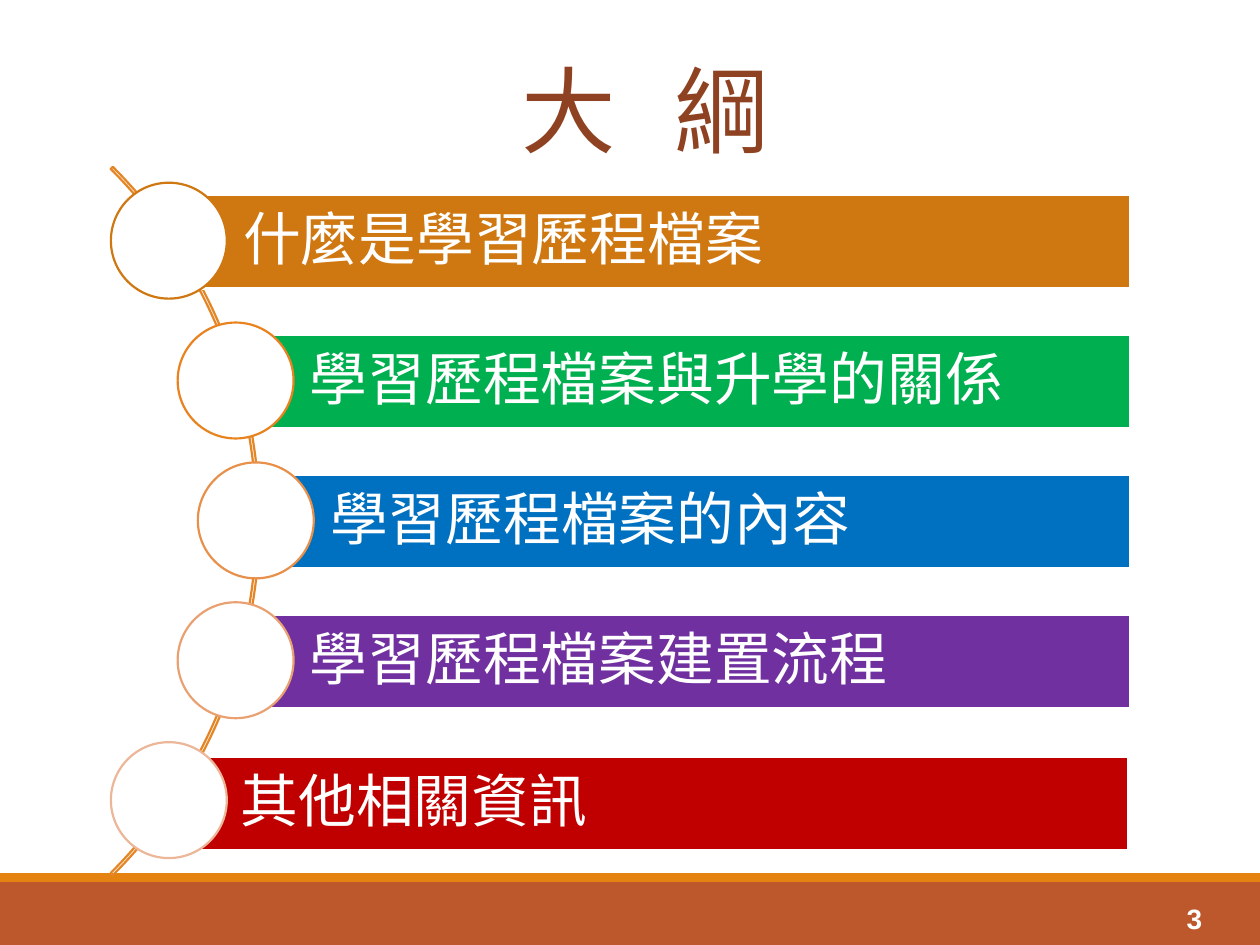
import pptx
import pptx.util
import pptx.dml.color
import pptx.enum.shapes
import pptx.enum.text
import pptx.oxml.ns
from lxml import etree

KIND = pptx.enum.shapes.MSO_SHAPE
ALIGN = pptx.enum.text.PP_ALIGN
ANCHOR = pptx.enum.text.MSO_ANCHOR
COLS, ROWS = 100, 75
CJK = "Noto Sans CJK JP"

ITEMS = [  # text, left of the circle, bar colour, ring colour, nudge of the bar
    ("什麼是學習歷程檔案", 8.8, "CF7710", "CF7710", (0, 0)),
    ("學習歷程檔案與升學的關係", 14.1, "00B050", "E88320", (0, 0)),
    ("學習歷程檔案的內容", 15.7, "0070C0", "E8904A", (0, 0)),
    ("學習歷程檔案建置流程", 14.1, "7030A0", "E9A172", (0, 0)),
    ("其他相關資訊", 8.8, "C00000", "ECB698", (-0.2, 0.2)),
]
TOP, PITCH, RING = 14.5, 11.1, 9.2
BAR, RIGHT = 7.4, 89.7


def color(text):
    return pptx.dml.color.RGBColor.from_string(text)


class Page:
    def __init__(self, deck):
        self.cell_w = deck.slide_width / COLS
        self.cell_h = deck.slide_height / ROWS
        self.slide = deck.slides.add_slide(deck.slide_layouts[5])

    def box(self, left, top, width, height):
        """Turn grid cells into slide lengths."""
        cells = (left * self.cell_w, top * self.cell_h,
                 width * self.cell_w, height * self.cell_h)
        return [round(cell) for cell in cells]

    def shape(self, kind, area, fill=None, line=None):
        item = self.slide.shapes.add_shape(kind, *self.box(*area))
        item.shadow.inherit = False
        if fill:
            item.fill.solid()
            item.fill.fore_color.rgb = color(fill)
        else:
            item.fill.background()
        if line:
            item.line.color.rgb = color(line)
            item.line.width = pptx.util.Pt(1.25)
        else:
            item.line.fill.background()
        return item

    def letter(self, item, texts, size, ink, font=CJK, align=ALIGN.LEFT,
               anchor=ANCHOR.MIDDLE, space=None, bold=False):
        """Fill a shape with one paragraph, a run for each text."""
        frame = item.text_frame
        frame.word_wrap = True
        frame.auto_size = pptx.enum.text.MSO_AUTO_SIZE.NONE
        frame.vertical_anchor = anchor
        para = frame.paragraphs[0]
        para.alignment = align
        para.line_spacing = space
        face = para.font
        face.name, face.size, face.bold = font, pptx.util.Pt(size), bold
        face.color.rgb = color(ink)
        for text in texts:
            run = para.add_run()
            run.text = text
            run.font.name = font
            east = etree.SubElement(run.font._element, pptx.oxml.ns.qn("a:ea"))
            east.set("typeface", font)
        return para

    def title(self, first, last, area):
        """Set two signs apart by one widely tracked space."""
        item = self.slide.shapes.title
        item.left, item.top, item.width, item.height = self.box(*area)
        para = self.letter(item, (first, " ", last), 54, "8E4221",
                           align=ALIGN.CENTER, anchor=ANCHOR.BOTTOM,
                           space=0.85)
        para.runs[1].font._element.set("spc", "2150")

    def label(self, text, area, **style):
        item = self.slide.shapes.add_textbox(*self.box(*area))
        self.letter(item, (text,), **style)

    def arc(self, area, line):
        item = self.shape(KIND.BLOCK_ARC, area, line=line)
        for spot, value in enumerate((189, 27, 0.003)):
            item.adjustments[spot] = value

    def entry(self, row, text, left, fill, ring, nudge):
        """Draw one bar with its circle."""
        top = TOP + row * PITCH
        start = left + RING / 2
        area = (start + nudge[0], top + 1 + nudge[1], RIGHT - start, BAR)
        bar = self.shape(KIND.RECTANGLE, area, fill, "FFFFFF")
        bar.text_frame.margin_left = pptx.util.Inches(0.59)
        self.letter(bar, (text,), 33, "FFFFFF", space=0.9)
        self.shape(KIND.OVAL, (left, top, RING, RING), "FFFFFF", ring)


def main():
    deck = pptx.Presentation()
    deck.slide_width = pptx.util.Inches(10)
    deck.slide_height = pptx.util.Inches(7.5)
    page = Page(deck)
    page.shape(KIND.RECTANGLE, (0, 70, COLS, 5), "BD582C")
    page.shape(KIND.RECTANGLE, (0, 69.3, COLS, 0.7), "E48312")
    page.label("3", (86.6, 70.9, 9.8, 3.9), size=16, ink="FFFFFF",
               font="Arial", align=ALIGN.RIGHT, bold=True)
    page.arc((-58.9, 1.6, 79.5, 79.5), "E48526")
    for row, item in enumerate(ITEMS):
        page.entry(row, *item)
    page.title("大", "綱", (31.5, 3.9, 39.4, 9.8))
    deck.save("out.pptx")


if __name__ == "__main__":
    main()
